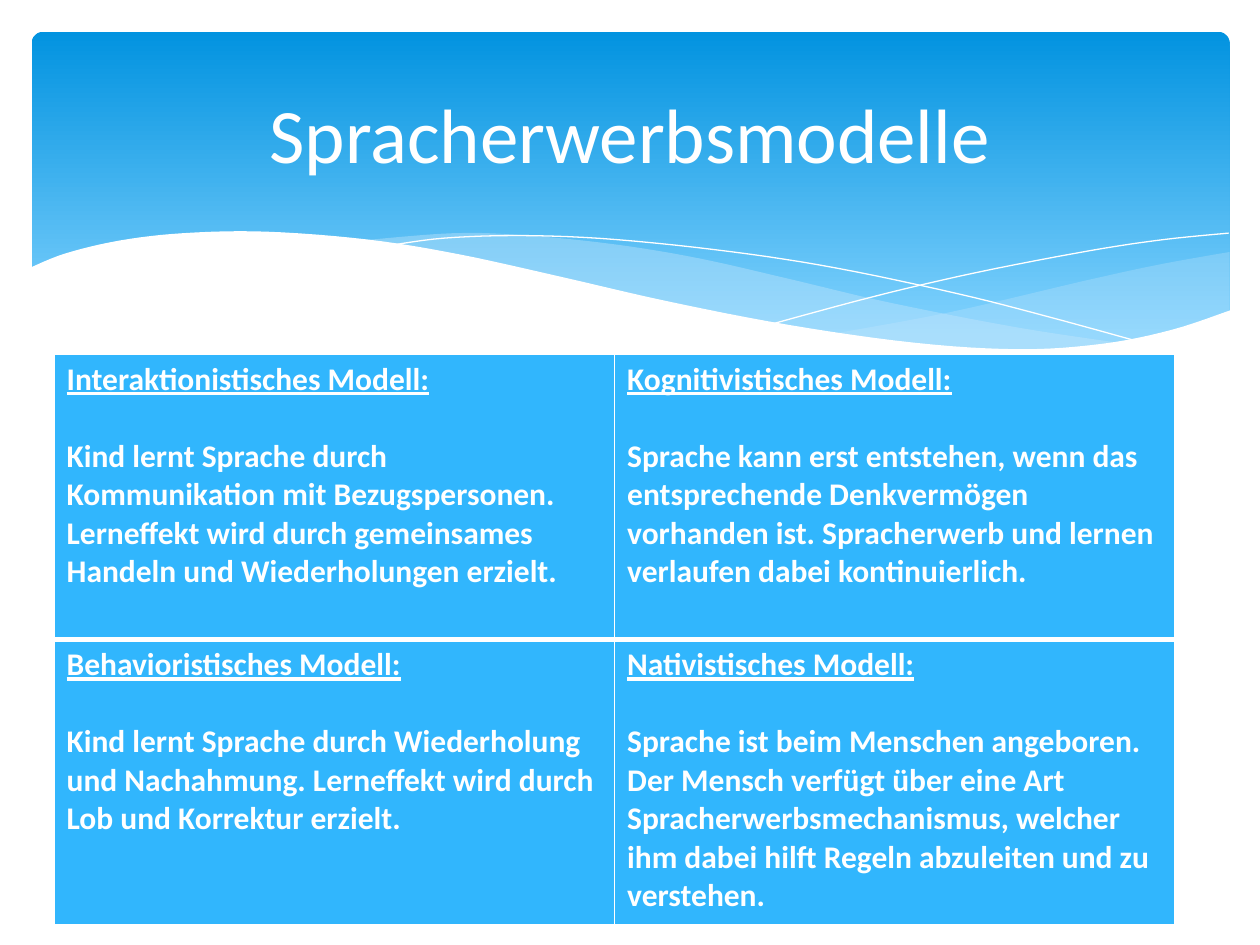
from lxml import etree
from pptx import Presentation, util as u
from pptx.dml.color import RGBColor
from pptx.enum import shapes, text
from pptx.oxml import ns

WHITE, BLUE, WASH = "FFFFFF", "31B6FD", "C6E7FC"

# Curves in centimetres, each given by the points it runs through
RIGHT_TOP = [(24.79, 5.08), (23.39, 5.33), (21.87, 5.66), (19.13, 6.3), (16.79, 6.73)]
RIGHT_LOW = [(16.79, 6.73), (18.26, 6.91), (19.53, 7.04), (20.68, 7.06),
             (21.92, 6.99), (23.19, 6.78), (24.1, 6.53), (24.79, 6.27)]
LEFT_TOP = [(22.68, 6.93), (20.5, 6.6), (17.93, 6.1), (15.98, 5.64), (14.1, 5.21),
            (12.42, 4.93), (10.67, 4.75), (9.17, 4.7), (7.26, 4.85)]
LEFT_LOW = [(7.26, 4.85), (9.19, 5.16), (11.4, 5.64), (13.46, 6.1), (15.7, 6.55),
            (17.65, 6.86), (19.33, 7.04), (20.78, 7.06), (22.68, 6.93)]
FALLING = [(7.85, 4.95), (8.97, 4.8), (10.57, 4.75), (12.42, 4.83), (14.78, 5.08),
           (16.89, 5.41), (19.3, 5.92), (21.11, 6.38), (23.04, 6.91)]
RISING = [(15.57, 6.53), (17.65, 5.97), (19.71, 5.49), (22, 5.05), (23.47, 4.83), (24.77, 4.7)]
FRONT = [(24.82, 6.25), (23.62, 6.65), (22.23, 6.93), (20.55, 7.04), (18.44, 6.91),
         (15.9, 6.55), (13.44, 6.07), (11.35, 5.59), (9.27, 5.13), (7.42, 4.83),
         (5.36, 4.67), (3.71, 4.7), (2.41, 4.85), (1.32, 5.11), (0.58, 5.41)]
BASE = [(0.58, 8.36), (24.82, 8.36)]

MODELS = [
    [("Interaktionistisches Modell:",
      "Kind lernt Sprache durch Kommunikation mit Bezugspersonen. Lerneffekt wird "
      "durch gemeinsames Handeln und Wiederholungen erzielt."),
     ("Kognitivistisches Modell:",
      "Sprache kann erst entstehen, wenn das entsprechende Denkvermögen vorhanden "
      "ist. Spracherwerb und lernen verlaufen dabei kontinuierlich.")],
    [("Behavioristisches Modell:",
      "Kind lernt Sprache durch Wiederholung und Nachahmung. Lerneffekt wird durch "
      "Lob und Korrektur erzielt."),
     ("Nativistisches Modell:",
      "Sprache ist beim Menschen angeboren. Der Mensch verfügt über eine Art "
      "Spracherwerbsmechanismus, welcher ihm dabei hilft Regeln abzuleiten und zu "
      "verstehen.")],
]


def tint(color, code):
    color.rgb = RGBColor.from_string(code)


def smooth(points, steps=6):
    """Return points along a Catmull-Rom curve through the given ones."""
    ends = [points[0], *points, points[-1]]
    curve = [points[0]]
    for a, b, c, d in zip(ends, ends[1:], ends[2:], ends[3:]):
        for step in range(1, steps + 1):
            t = step / steps
            curve.append(tuple(
                (2 * q + (r - p) * t + (2 * p - 5 * q + 4 * r - s) * t ** 2
                 + (3 * q - p - 3 * r + s) * t ** 3) / 2
                for p, q, r, s in zip(a, b, c, d)))
    return curve


class Page:
    font = "Calibri"

    def __init__(self, deck):
        self.slide = deck.slides.add_slide(deck.slide_layouts[5])
        self.shapes = self.slide.shapes

    def style(self, para, size, **looks):
        para.font.name, para.font.size = self.font, u.Pt(size)
        tint(para.font.color, WHITE)
        for name, value in looks.items():
            setattr(para.font, name, value)

    def banner(self, left, top, width, height, stops, round_by):
        box = self.shapes.add_shape(shapes.MSO_SHAPE.ROUNDED_RECTANGLE,
                                    *map(u.Cm, (left, top, width, height)))
        box.adjustments[0] = round_by
        box.shadow.inherit = False
        box.line.fill.background()
        box.fill.gradient()
        box.fill.gradient_angle = 270
        for stop, (place, code) in zip(box.fill.gradient_stops, stops):
            stop.position = place
            tint(stop.color, code)

    def outline(self, points, closed):
        spots = [(u.Cm(x), u.Cm(y)) for x, y in points]
        pen = self.shapes.build_freeform(*spots[0])
        pen.add_line_segments(spots[1:], close=closed)
        form = pen.convert_to_shape()
        form.shadow.inherit = False
        return form

    def area(self, points, code, alpha=100):
        form = self.outline(points, True)
        form.line.fill.background()
        form.fill.solid()
        tint(form.fill.fore_color, code)
        if alpha < 100:
            color = form.element.spPr.find(".//" + ns.qn("a:srgbClr"))
            etree.SubElement(color, ns.qn("a:alpha"), val=str(alpha * 1000))

    def thread(self, points):
        form = self.outline(smooth(points), False)
        form.fill.background()
        form.line.width = u.Pt(0)
        tint(form.line.color, WHITE)

    def title(self, words, left, top, width, height):
        box = self.shapes.title
        box.left, box.top, box.width, box.height = map(u.Cm, (left, top, width, height))
        frame = box.text_frame
        frame.text = words
        frame.vertical_anchor = text.MSO_ANCHOR.MIDDLE
        frame.paragraphs[0].alignment = text.PP_ALIGN.CENTER
        self.style(frame.paragraphs[0], 44)
        box.element.getparent().append(box.element)  # in front of the banner

    def edges(self, cell, **widths):
        props = cell._tc.get_or_add_tcPr()
        for side in ("L", "R", "T", "B"):
            line = etree.SubElement(props, ns.qn("a:ln" + side),
                                    w=str(u.Pt(widths.get(side, 1))))
            fill = etree.SubElement(line, ns.qn("a:solidFill"))
            etree.SubElement(fill, ns.qn("a:srgbClr"), val=WHITE)

    def table(self, rows, left, top, width, height):
        grid = self.shapes.add_table(len(rows), len(rows[0]),
                                     *map(u.Cm, (left, top, width, height))).table
        grid.first_row = grid.horz_banding = False
        for i, row in enumerate(rows):
            for j, (head, body) in enumerate(row):
                cell = grid.cell(i, j)
                self.edges(cell, **({"T": 3} if i else {"B": 3}))
                cell.fill.solid()
                tint(cell.fill.fore_color, BLUE)
                cell.text = f"{head}\n{body}"
                first, last = cell.text_frame.paragraphs
                self.style(first, 18, bold=True, underline=True)
                self.style(last, 18, bold=True)
                first.space_after = u.Pt(22)


def main():
    deck = Presentation()
    deck.slide_width, deck.slide_height = u.Cm(25.4), u.Cm(19.05)
    page = Page(deck)
    page.banner(0.64, 0.64, 24.15, 6.86, [(0, "0293E0"), (0.9, "83D3FE")], 0.034)
    page.area(smooth(RIGHT_TOP) + smooth(RIGHT_LOW), WASH, 29)
    page.area(smooth(LEFT_TOP) + smooth(LEFT_LOW), WASH, 40)
    page.thread(FALLING)
    page.thread(RISING)
    page.area(smooth(FRONT) + BASE, WHITE)
    page.title("Spracherwerbsmodelle", 1.27, 0.94, 22.86, 3.48)
    page.table(MODELS, 1.09, 7.14, 22.6, 11.5)
    deck.save("out.pptx")


if __name__ == "__main__":
    main()
